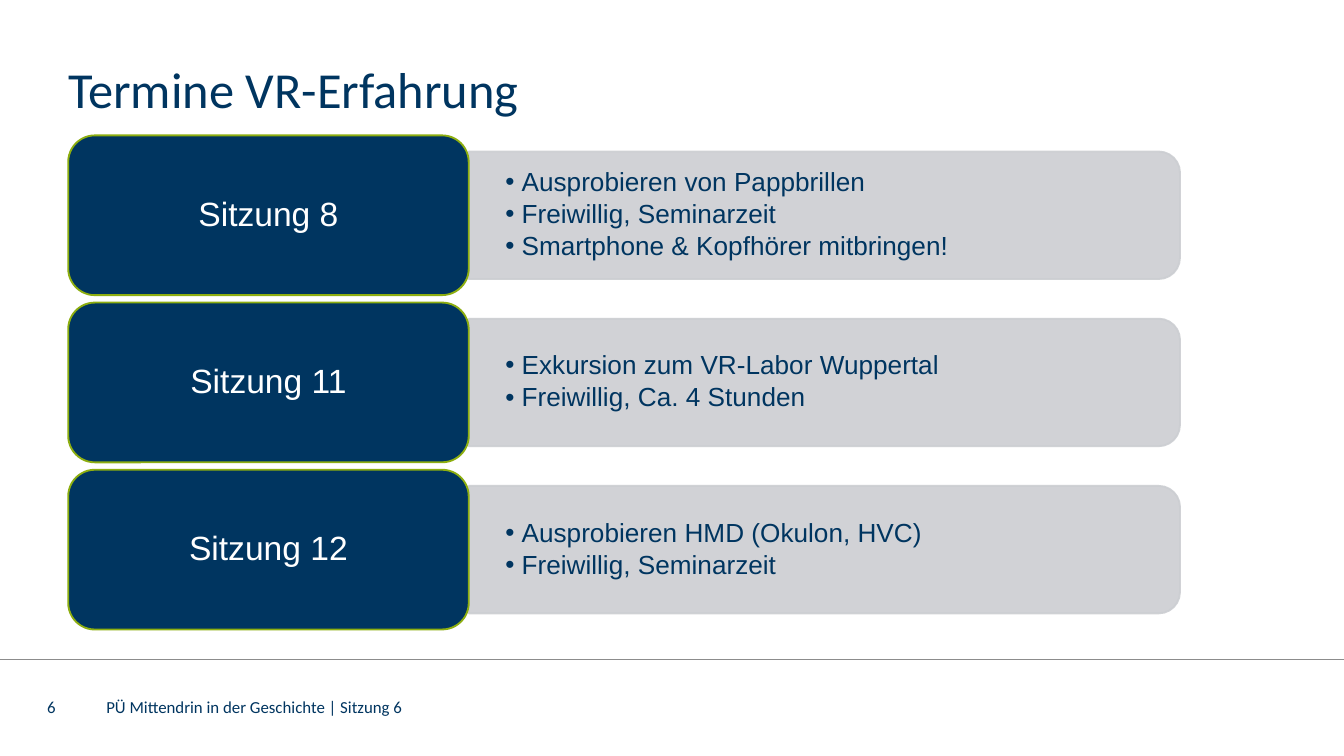
from pptx import Presentation
from pptx.dml.color import RGBColor
from pptx.enum.shapes import MSO_CONNECTOR, MSO_SHAPE
from pptx.enum.text import MSO_ANCHOR, PP_ALIGN
from pptx.oxml.ns import qn
from pptx.util import Cm, Pt
from lxml import etree

NAVY, GREEN, GREY, WHITE = "003560", "8DAE10", "CCCED2", "FFFFFF"
LIST_X = 8.86
CARD_X, CARD_Y, CARD_W, CARD_H = 1.29, 2.56, 7.57, 3.02
PITCH = 3.16
BAR_W, BAR_H = 13.44, 2.41
LIST_W, LIST_H = 13.31, 2.18

sessions = [
    ("Sitzung 8", ["Ausprobieren von Pappbrillen", "Freiwillig, Seminarzeit",
                   "Smartphone & Kopfhörer mitbringen!"]),
    ("Sitzung 11", ["Exkursion zum VR-Labor Wuppertal", "Freiwillig, Ca. 4 Stunden"]),
    ("Sitzung 12", ["Ausprobieren HMD (Okulon, HVC)", "Freiwillig, Seminarzeit"]),
]


def set_text(shape, lines, size, font, color, margin_x=0, margin_y=0):
    """Fill the shape with one paragraph per line, centred vertically."""
    tf = shape.text_frame
    tf.word_wrap = True
    tf.vertical_anchor = MSO_ANCHOR.MIDDLE
    tf.margin_left = tf.margin_right = Cm(margin_x)
    tf.margin_top = tf.margin_bottom = Cm(margin_y)
    tf.text = "\n".join(lines)
    for p in tf.paragraphs:
        p.alignment = PP_ALIGN.LEFT
        for r in p.runs:
            r.font.size = Pt(size)
            r.font.name = font
            r.font.color.rgb = RGBColor.from_string(color)
    return tf


def style(shape, fill, line):
    shape.shadow.inherit = False
    shape.fill.solid()
    shape.fill.fore_color.rgb = RGBColor.from_string(fill)
    shape.line.color.rgb = RGBColor.from_string(line)
    shape.line.width = Pt(1)


prs = Presentation()
prs.slide_width, prs.slide_height = Cm(25.4), Cm(14.29)
s = prs.slides.add_slide(prs.slide_layouts[5])

rule = s.shapes.add_connector(MSO_CONNECTOR.STRAIGHT, 0, Cm(12.47), prs.slide_width, Cm(12.47))
rule.line.color.rgb = RGBColor.from_string("8C8C8C")
rule.line.width = Pt(0.5)
etree.SubElement(rule._element.spPr, qn("a:effectLst"))

title = s.shapes.title
title.left, title.top, title.width, title.height = Cm(1.29), Cm(1.09), Cm(21), Cm(1.3)
tf = set_text(title, ["Termine VR-Erfahrung"], 27, "Calibri", NAVY)
tf.vertical_anchor = MSO_ANCHOR.TOP

for i, (name, points) in enumerate(sessions):
    top = CARD_Y + i * PITCH
    mid = top + CARD_H / 2

    # A quarter turn puts the two rounded corners on the right
    bar = s.shapes.add_shape(MSO_SHAPE.ROUND_2_SAME_RECTANGLE,
                             Cm(LIST_X + (BAR_W - BAR_H) / 2), Cm(mid - BAR_W / 2),
                             Cm(BAR_H), Cm(BAR_W))
    bar.rotation = 90
    style(bar, GREY, GREY)
    for clr in bar._element.spPr.iter(qn("a:srgbClr")):
        etree.SubElement(clr, qn("a:alpha"), val="90000")

    box = s.shapes.add_textbox(Cm(LIST_X), Cm(mid - LIST_H / 2), Cm(LIST_W), Cm(LIST_H))
    tf = set_text(box, points, 14, "Arial", NAVY, 0.69, 0.36)
    for p in tf.paragraphs:
        p.line_spacing = 0.9
        p.space_after = Pt(2.1)
        pPr = p._p.get_or_add_pPr()
        pPr.set("marL", str(Cm(0.31)))
        pPr.set("indent", str(Cm(-0.31)))
        etree.SubElement(pPr, qn("a:buFont"), typeface="Arial")
        etree.SubElement(pPr, qn("a:buChar"), char="•")

    card = s.shapes.add_shape(MSO_SHAPE.ROUNDED_RECTANGLE,
                              Cm(CARD_X), Cm(top), Cm(CARD_W), Cm(CARD_H))
    style(card, NAVY, GREEN)
    p = set_text(card, [name], 18, "Arial", WHITE, 0.18, 0.1).paragraphs[0]
    p.alignment = PP_ALIGN.CENTER
    p.line_spacing = 0.9

for text, left, width in [("6", 0.89, 0.71),
                          ("PÜ Mittendrin in der Geschichte | Sitzung 6", 2.01, 15.29)]:
    box = s.shapes.add_textbox(Cm(left), Cm(13.21), Cm(width), Cm(0.3))
    set_text(box, [text], 9, "Calibri", NAVY)

prs.save("out.pptx")
